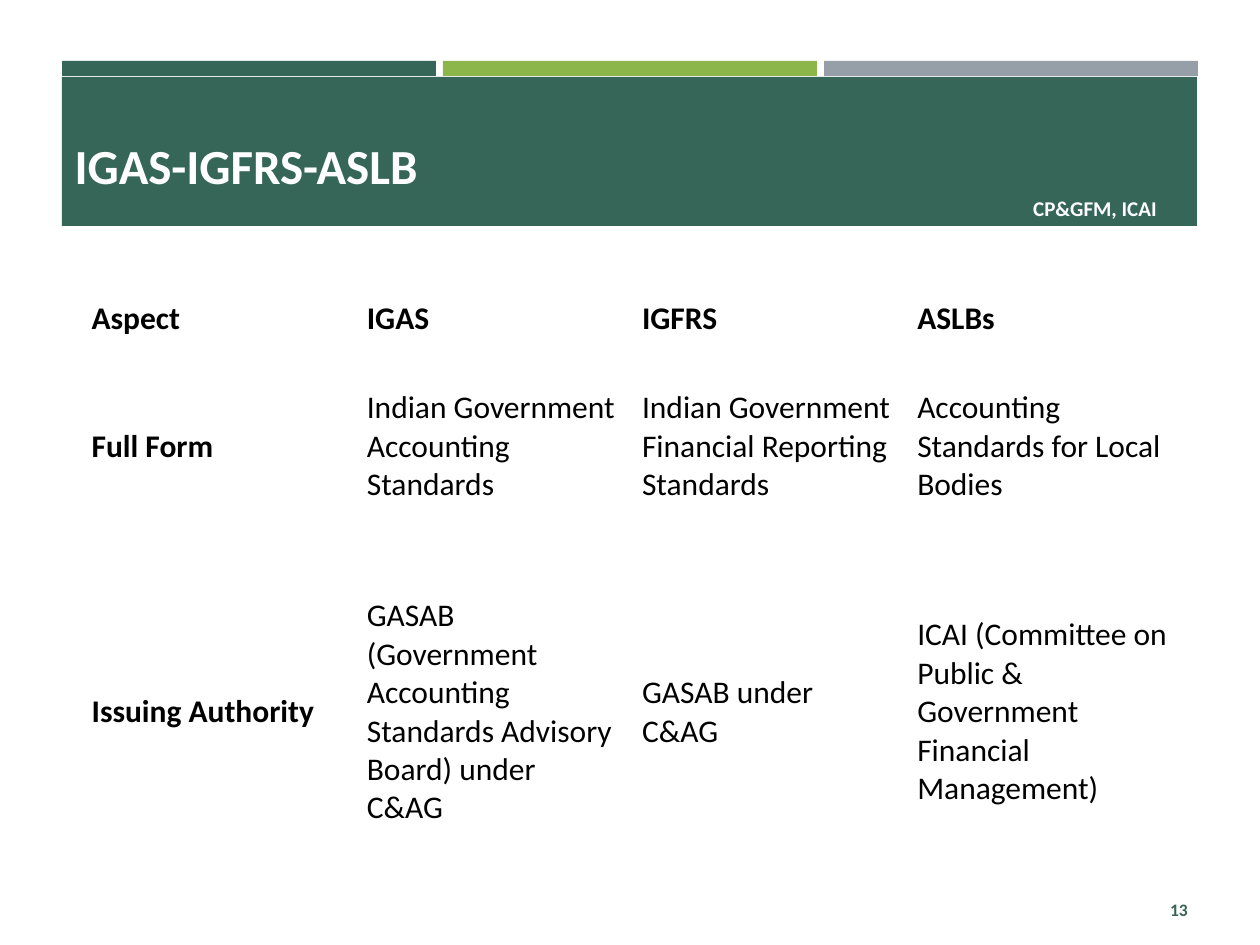
from pptx import Presentation
from pptx.dml.color import RGBColor
from pptx.enum.shapes import MSO_SHAPE
from pptx.enum.text import MSO_ANCHOR, MSO_AUTO_SIZE, PP_ALIGN
from pptx.util import Pt

PX = 914400 / 126
GREEN = RGBColor(0x36, 0x66, 0x58)
LIME = RGBColor(0x8C, 0xB6, 0x4A)
GREY = RGBColor(0x96, 0x9F, 0xA7)
WHITE = RGBColor(0xFF, 0xFF, 0xFF)
BLACK = RGBColor(0, 0, 0)


def px(*lengths):
    return [round(n * PX) for n in lengths]


class Deck:
    font = "Calibri"

    def __init__(self, width, height):
        self.prs = Presentation()
        self.prs.slide_width, self.prs.slide_height = px(width, height)
        self.s = self.prs.slides.add_slide(self.prs.slide_layouts[5])

    def add_text(self, tf, text, size, color, bold=True, align=PP_ALIGN.LEFT):
        tf.word_wrap = True
        p = tf.paragraphs[0]
        p.alignment = align
        r = p.add_run()
        r.text = text
        r.font.name, r.font.size, r.font.bold = self.font, Pt(size), bold
        r.font.color.rgb = color

    def rect(self, box, color):
        sp = self.s.shapes.add_shape(MSO_SHAPE.RECTANGLE, *px(*box))
        sp.shadow.inherit = False
        sp.fill.solid()
        sp.fill.fore_color.rgb = color
        sp.line.fill.background()
        return sp

    def title(self, box, text):
        sp = self.s.shapes.title
        sp.left, sp.top, sp.width, sp.height = px(*box)
        tf = sp.text_frame
        tf.auto_size = MSO_AUTO_SIZE.NONE
        tf.vertical_anchor = MSO_ANCHOR.MIDDLE
        self.add_text(tf, text, 28, WHITE)
        # Bring the title in front of the banner
        self.s.shapes._spTree.append(sp._element)

    def text_box(self, box, text, size, color, align):
        tf = self.s.shapes.add_textbox(*px(*box)).text_frame
        tf.vertical_anchor = MSO_ANCHOR.MIDDLE
        self.add_text(tf, text, size, color, align=align)

    def table(self, box, rows, heights):
        table = self.s.shapes.add_table(len(rows), len(rows[0]), *px(*box)).table
        table.horz_banding = False
        for row, height in zip(table.rows, heights):
            row.height = px(height)[0]
        for i, texts in enumerate(rows):
            for j, text in enumerate(texts):
                cell = table.cell(i, j)
                cell.fill.solid()
                cell.fill.fore_color.rgb = WHITE
                cell.vertical_anchor = MSO_ANCHOR.MIDDLE
                self.add_text(cell.text_frame, text, 18, BLACK, bold=i == 0 or j == 0)


ROWS = [
    ["Aspect", "IGAS", "IGFRS", "ASLBs"],
    ["Full Form",
     "Indian Government Accounting Standards",
     "Indian Government Financial Reporting Standards",
     "Accounting Standards for Local Bodies"],
    ["Issuing Authority",
     "GASAB (Government Accounting Standards Advisory Board) under C&AG",
     "GASAB under C&AG",
     "ICAI (Committee on Public & Government Financial Management)"],
]


def main():
    deck = Deck(1260, 945)

    # Colour strips above the banner
    for i, color in enumerate((GREEN, LIME, GREY)):
        deck.rect((62 + i * 381, 61, 374, 15), color)

    # Banner with the committee label and title
    deck.rect((62, 77, 1135, 149), GREEN)
    label = deck.rect((1007, 197, 176, 23), GREEN)
    deck.add_text(label.text_frame, "CP&GFM, ICAI", 12, WHITE, align=PP_ALIGN.CENTER)
    deck.title((62, 95, 982, 139), "IGAS-IGFRS-ASLB")

    # Comparison of the standards
    deck.table((79, 282, 1101, 604), ROWS, (73, 183, 348))

    # Slide number
    deck.text_box((1094, 885, 106, 50), "13", 10, GREEN, PP_ALIGN.RIGHT)

    deck.prs.save("out.pptx")


if __name__ == "__main__":
    main()
